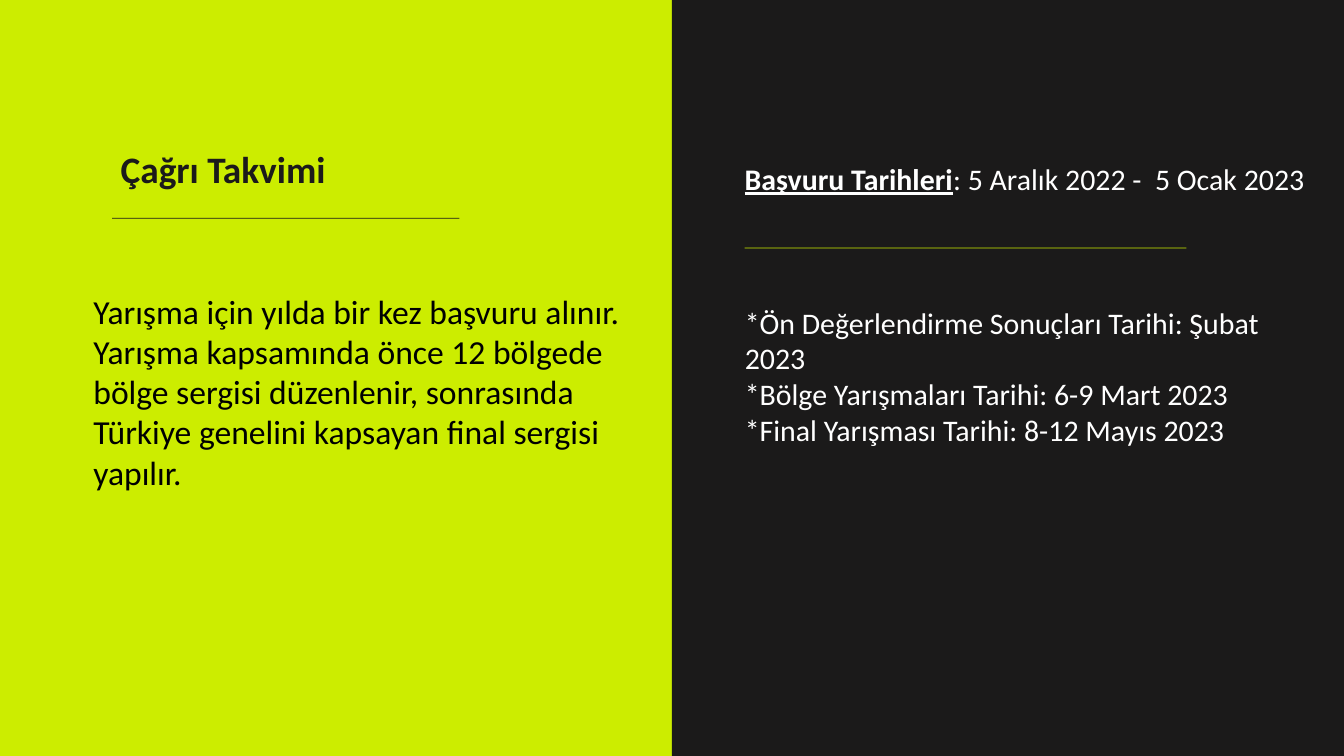
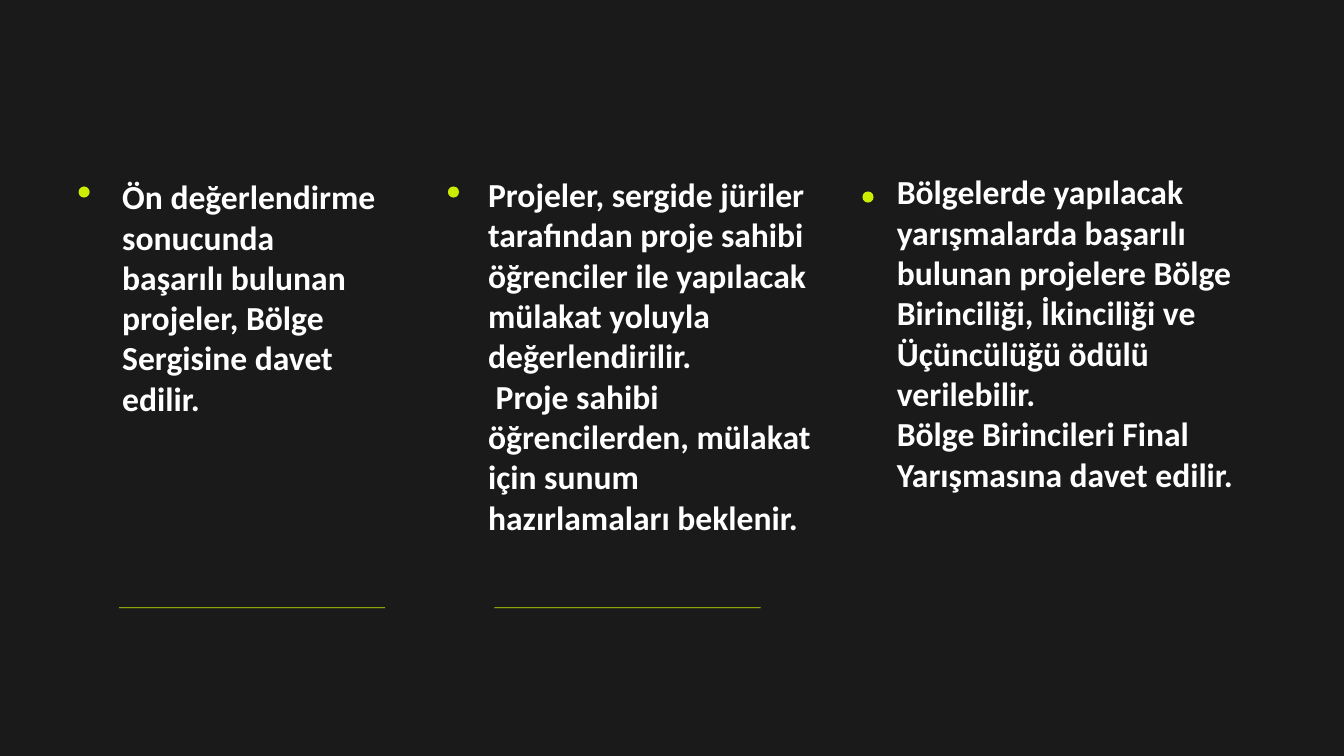
from pptx import Presentation
from pptx.dml.color import RGBColor
from pptx.enum.shapes import MSO_SHAPE as SHAPE
from pptx.enum.text import MSO_ANCHOR as ANCHOR, MSO_AUTO_SIZE as AUTO, PP_ALIGN as ALIGN
from pptx.oxml.ns import qn
from pptx.util import Cm, Pt

COLORS = {"lime": "CCED00", "dark": "1B1A1A", "white": "FFFFFF", "black": "000000"}
FONT = "Calibri"
WIDTH, HEIGHT = 50.8, 28.58
TITLE_AND_BODY, BLANK = 1, 6
RULE = 0.03
INSET = (0.25, 0.13)


def color(name):
    return RGBColor.from_string(COLORS[name])


class Deck:
    """Holds the presentation, its style and the slide being built."""

    def __init__(self):
        self.prs = Presentation()
        self.prs.slide_width, self.prs.slide_height = Cm(WIDTH), Cm(HEIGHT)
        self.s = None

    def slide(self, layout, background):
        self.s = self.prs.slides.add_slide(self.prs.slide_layouts[layout])
        fill = self.s.background.fill
        fill.solid()
        fill.fore_color.rgb = color(background)

    def shape(self, kind, x, y, w, h, fill):
        sp = self.s.shapes.add_shape(kind, Cm(x), Cm(y), Cm(w), Cm(h))
        sp.shadow.inherit = False
        sp.fill.solid()
        sp.fill.fore_color.rgb = color(fill)
        sp.line.fill.background()

    def rule(self, x, y, w, fill="lime"):
        self.shape(SHAPE.RECTANGLE, x, y, w, RULE, fill)

    def dot(self, x, y):
        self.shape(SHAPE.OVAL, x, y, 0.42, 0.42, "lime")

    def text(self, x, y, w, h, lines, size, fill, bold=False, inset=(0, 0), spacing=None):
        sp = self.s.shapes.add_textbox(Cm(x), Cm(y), Cm(w), Cm(h))
        return self.set_text(sp, lines, size, fill, bold, inset, spacing)

    def placeholder(self, index, x, y, w, h, lines, size, fill, bold=False, spacing=None):
        """Moves a template placeholder to the front, without its bullets."""
        sp = self.s.placeholders[index]
        sp.left, sp.top, sp.width, sp.height = Cm(x), Cm(y), Cm(w), Cm(h)
        sp.element.getparent().append(sp.element)
        tf = self.set_text(sp, lines, size, fill, bold, (0, 0), spacing)
        for p in tf.paragraphs:
            pPr = p._p.get_or_add_pPr()
            pPr.set("marL", "0")
            pPr.set("indent", "0")
            pPr.find(qn("a:defRPr")).addprevious(pPr.makeelement(qn("a:buNone"), {}))

    def set_text(self, sp, lines, size, fill, bold, inset, spacing):
        tf = sp.text_frame
        tf.text = "\n".join(lines)
        tf.word_wrap, tf.auto_size = True, AUTO.NONE
        tf.vertical_anchor = ANCHOR.TOP
        tf.margin_left = tf.margin_right = Cm(inset[0])
        tf.margin_top = tf.margin_bottom = Cm(inset[1])
        for p in tf.paragraphs:
            p.alignment = ALIGN.LEFT
            p.space_before = Pt(0)
            if spacing:
                p.line_spacing = Pt(spacing)
            p.font.name, p.font.size, p.font.bold = FONT, Pt(size), bold
            p.font.color.rgb = color(fill)
        return tf


def calendar_slide(deck):
    deck.slide(TITLE_AND_BODY, "lime")
    deck.shape(SHAPE.RECTANGLE, WIDTH / 2, 0, WIDTH / 2, HEIGHT, "dark")

    deck.placeholder(0, 4.56, 6.05, 12.8, 1.27, ["Çağrı Takvimi"], 40, "dark", True, 33)
    deck.rule(4.24, 8.24, 13.13, "dark")
    deck.text(3.28, 10.85, 20.95, 7.95, [
        "Yarışma için yılda bir kez başvuru alınır. Yarışma kapsamında önce 12 bölgede "
        "bölge sergisi düzenlenir, sonrasında Türkiye genelini kapsayan final sergisi yapılır.",
    ], 36, "black", inset=INSET)

    dates_x = 28.15
    tf = deck.text(dates_x, 6.25, 22.65, 2.36, ["Başvuru Tarihleri"], 32, "white", spacing=33)
    p = tf.paragraphs[0]
    label = p.runs[0]
    label.font.bold = label.font.underline = True
    p.add_run().text = ": 5 Aralık 2022 -  5 Ocak 2023"
    deck.rule(dates_x, 9.36, 16.69)
    deck.placeholder(1, dates_x, 11.5, 21.34, 7.8, [
        "*Ön Değerlendirme Sonuçları Tarihi: Şubat 2023",
        "*Bölge Yarışmaları Tarihi: 6-9 Mart 2023",
        "*Final Yarışması Tarihi: 8-12 Mayıs 2023",
    ], 32, "white")


def process_slide(deck):
    deck.slide(BLANK, "dark")
    # (dot x, dot y), (text x, y, width, height), paragraphs
    steps = [
        ((2.97, 7.05), (4.37, 6.53, 10.11, 9.5), [
            "Ön değerlendirme sonucunda başarılı bulunan projeler, Bölge Sergisine davet edilir.",
        ]),
        ((16.93, 7.05), (18.2, 6.45, 12.7, 14.1), [
            "Projeler, sergide jüriler tarafından proje sahibi öğrenciler ile yapılacak "
            "mülakat yoluyla değerlendirilir.",
            " Proje sahibi öğrencilerden, mülakat için sunum hazırlamaları beklenir.",
        ]),
        ((32.6, 7.24), (33.65, 6.35, 14.6, 12.57), [
            "Bölgelerde yapılacak yarışmalarda başarılı bulunan projelere Bölge Birinciliği, "
            "İkinciliği ve Üçüncülüğü ödülü verilebilir.",
            "Bölge Birincileri Final Yarışmasına davet edilir.",
        ]),
    ]
    for dot, box, lines in steps:
        deck.dot(*dot)
        deck.text(*box, lines, 36, "white", True, INSET)
    for x in (4.5, 18.69):
        deck.rule(x, 22.96, 10.06)


def main():
    deck = Deck()
    calendar_slide(deck)
    process_slide(deck)
    deck.prs.save("out.pptx")


if __name__ == "__main__":
    main()
